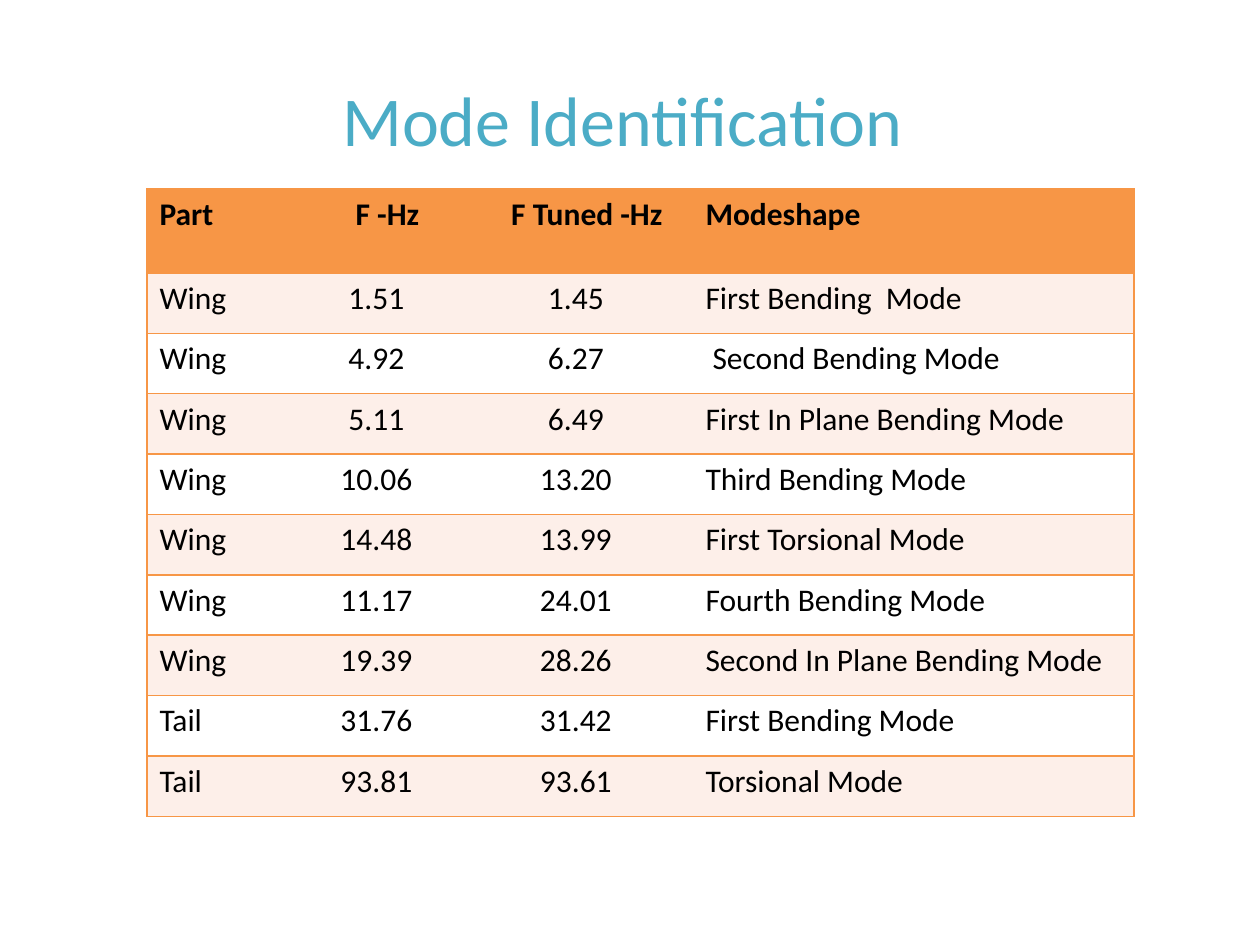
from dataclasses import dataclass

from lxml.etree import SubElement
from pptx import Presentation
from pptx.dml.color import RGBColor as Rgb
from pptx.enum.text import MSO_ANCHOR as Anchor, PP_ALIGN as Align
from pptx.oxml.ns import qn
from pptx.util import Pt


@dataclass(frozen=True)
class Theme:
    """Colours and type sizes of the slide."""
    font: str = "Calibri"
    title: str = "4BACC6"
    ink: str = "000000"
    accent: str = "F79646"
    bands: tuple = ("FFFFFF", "FDEFE9")
    title_size: int = 40
    body_size: int = 18


HEADINGS = ("Part", "F -Hz", "F Tuned -Hz", "Modeshape")
MODES = (
    ("Wing", "1.51", "1.45", "First Bending  Mode"),
    ("Wing", "4.92", "6.27", "Second Bending Mode"),
    ("Wing", "5.11", "6.49", "First In Plane Bending Mode"),
    ("Wing", "10.06", "13.20", "Third Bending Mode"),
    ("Wing", "14.48", "13.99", "First Torsional Mode"),
    ("Wing", "11.17", "24.01", "Fourth Bending Mode"),
    ("Wing", "19.39", "28.26", "Second In Plane Bending Mode"),
    ("Tail", "31.76", "31.42", "First Bending Mode"),
    ("Tail", "93.81", "93.61", "Torsional Mode"),
)
COLUMN_WIDTHS = (84, 102, 126, 252)
FREQUENCY_COLUMNS = (1, 2)
HEADER_HEIGHT, MODE_HEIGHT = 48, 34.5
INSET = 7.2


class SlideBuilder:
    """Holds the theme and the slide being built."""

    def __init__(self, slide, theme):
        """Keep the slide and its theme."""
        self.slide, self.theme = slide, theme

    def label(self, paragraph, text, size, color, bold=False, align=Align.LEFT):
        """Fill one paragraph and format its runs."""
        paragraph.text = text
        paragraph.alignment = align
        for run in paragraph.runs:
            font = run.font
            font.name, font.size, font.bold = self.theme.font, Pt(size), bold
            font.color.rgb = Rgb.from_string(color)

    def title(self, text, left, top, width, height):
        """Add the centred slide title."""
        heading = self.slide.shapes.add_textbox(Pt(left), Pt(top), Pt(width), Pt(height))
        frame = heading.text_frame
        frame.word_wrap = True
        frame.vertical_anchor = Anchor.MIDDLE
        frame.margin_right = Pt(16)
        self.label(frame.paragraphs[0], text, self.theme.title_size,
                   self.theme.title, align=Align.CENTER)

    def borders(self, cell, visible_sides):
        """Draw the named cell borders and clear the others."""
        properties = cell._tc.get_or_add_tcPr()
        for side in "LRTB":
            line = SubElement(properties, qn(f"a:ln{side}"), w=str(Pt(1)))
            if side in visible_sides:
                fill = SubElement(line, qn("a:solidFill"))
                SubElement(fill, qn("a:srgbClr"), val=self.theme.accent)
            else:
                SubElement(line, qn("a:noFill"))

    def cell(self, cell, text, fill, sides, bold, align, left_inset, right_inset):
        """Style and fill one table cell."""
        self.borders(cell, sides)
        cell.fill.solid()
        cell.fill.fore_color.rgb = Rgb.from_string(fill)
        cell.margin_left, cell.margin_right = Pt(left_inset), Pt(right_inset)
        self.label(cell.text_frame.paragraphs[0], text, self.theme.body_size,
                   self.theme.ink, bold, align)

    def mode_table(self, left, top):
        """Add the table of headings and modes."""
        rows = (HEADINGS, *MODES)
        heights = [HEADER_HEIGHT] + [MODE_HEIGHT] * len(MODES)
        table = self.slide.shapes.add_table(
            len(rows), len(HEADINGS), Pt(left), Pt(top),
            Pt(sum(COLUMN_WIDTHS)), Pt(sum(heights))).table
        table.horz_banding = False
        for column, width in zip(table.columns, COLUMN_WIDTHS):
            column.width = Pt(width)
        for r, (texts, height) in enumerate(zip(rows, heights)):
            table.rows[r].height = Pt(height)
            is_header = r == 0
            fill = self.theme.accent if is_header else self.theme.bands[r % 2]
            for c, text in enumerate(texts):
                sides = "TB" + {0: "L", len(texts) - 1: "R"}.get(c, "")
                align, left_inset, right_inset = Align.LEFT, INSET, INSET
                if c in FREQUENCY_COLUMNS:
                    align = Align.CENTER
                    left_inset, right_inset = (12, INSET) if is_header else (INSET, 15)
                elif text == "Second Bending Mode":
                    left_inset = INSET + 4
                self.cell(table.cell(r, c), text, fill, sides, is_header,
                          align, left_inset, right_inset)


def main():
    """Build and save the slide."""
    deck = Presentation()
    deck.slide_width, deck.slide_height = Pt(720), Pt(540)
    builder = SlideBuilder(deck.slides.add_slide(deck.slide_layouts[6]), Theme())
    builder.title("Mode Identification", 36, 21.6, 648, 92)
    builder.mode_table(84, 108)
    deck.save("out.pptx")


if __name__ == "__main__":
    main()
